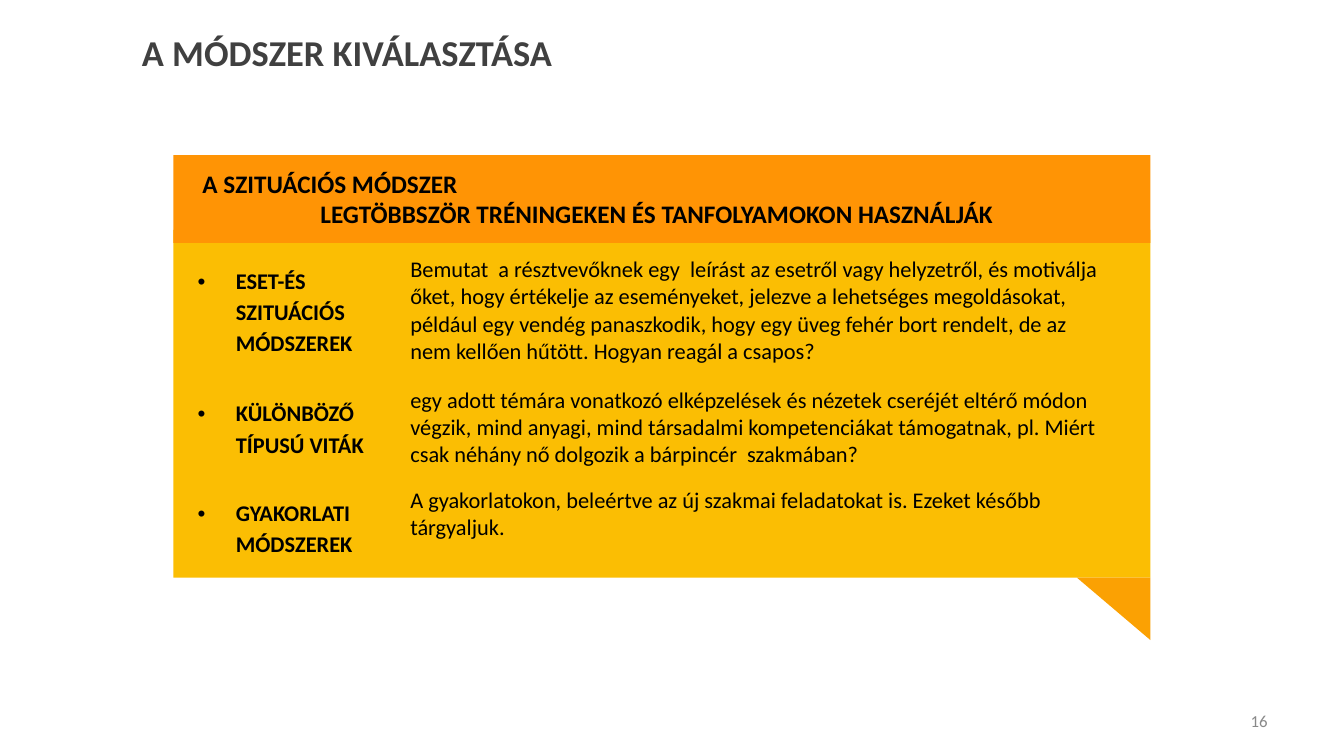
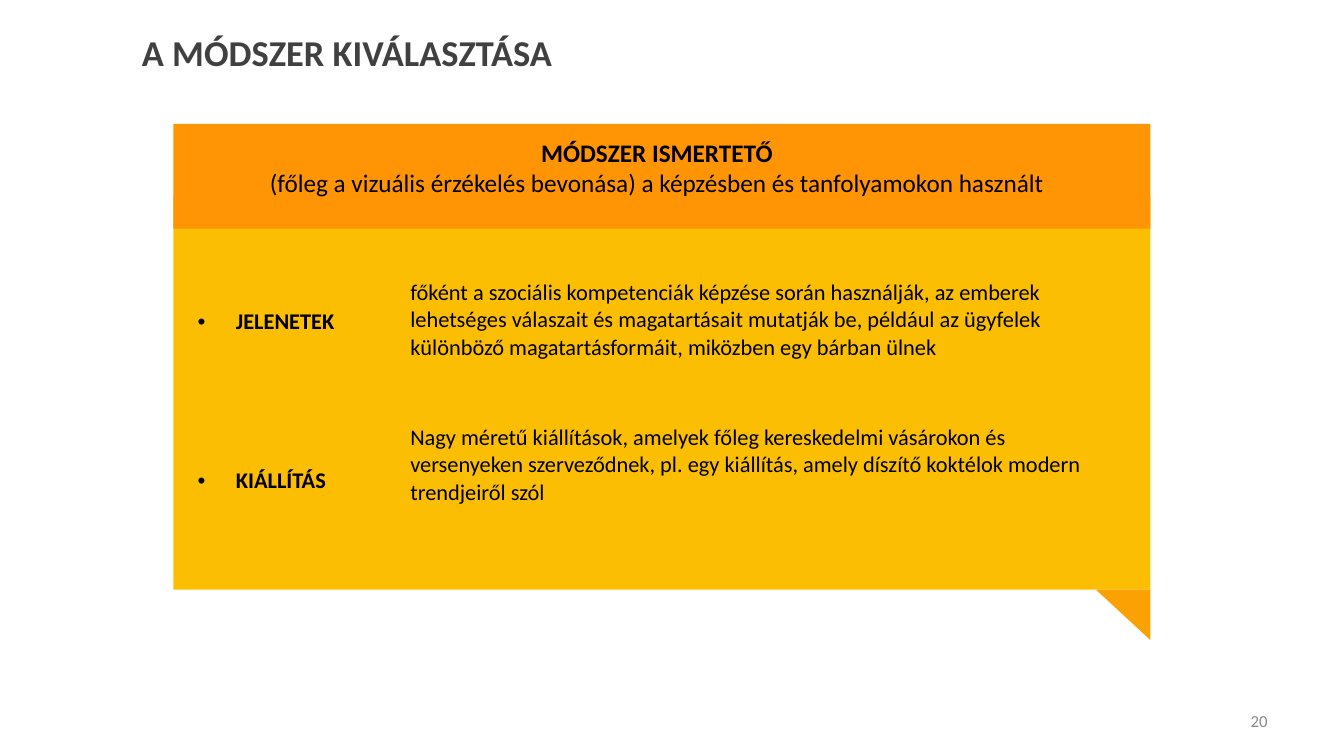
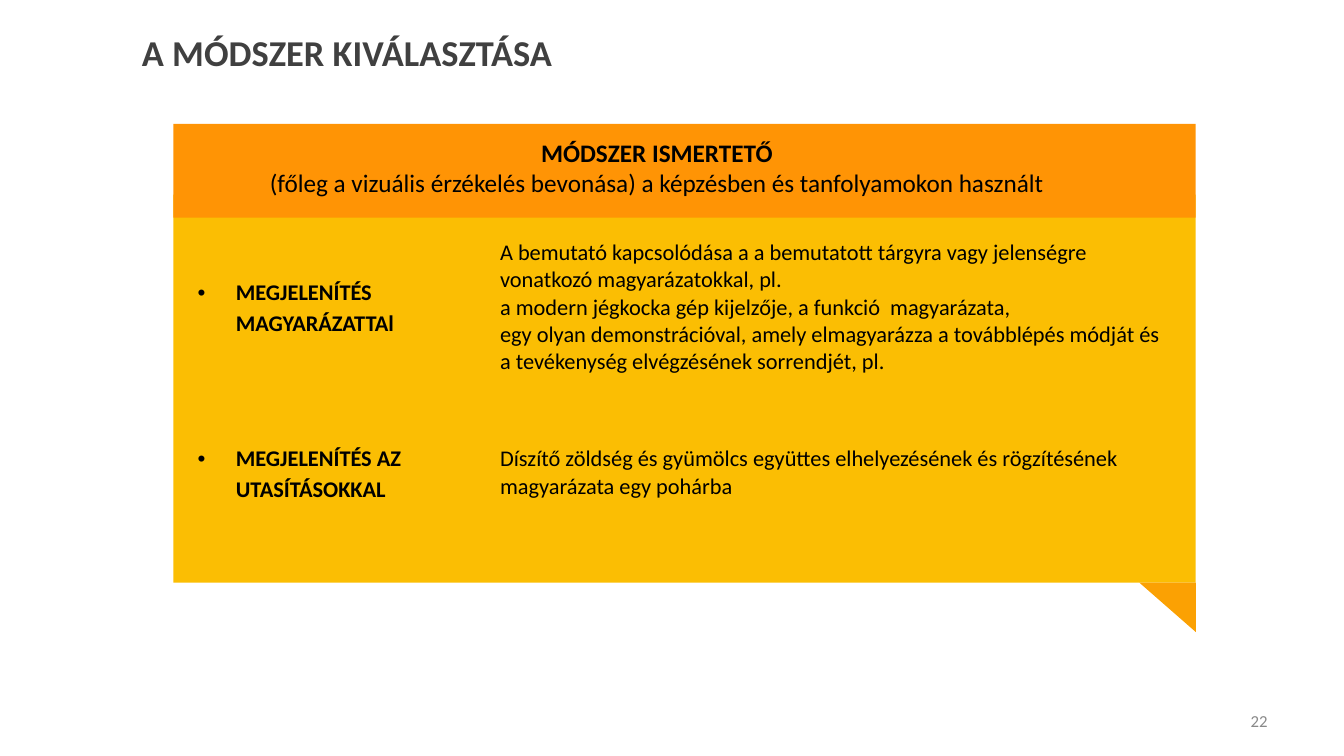
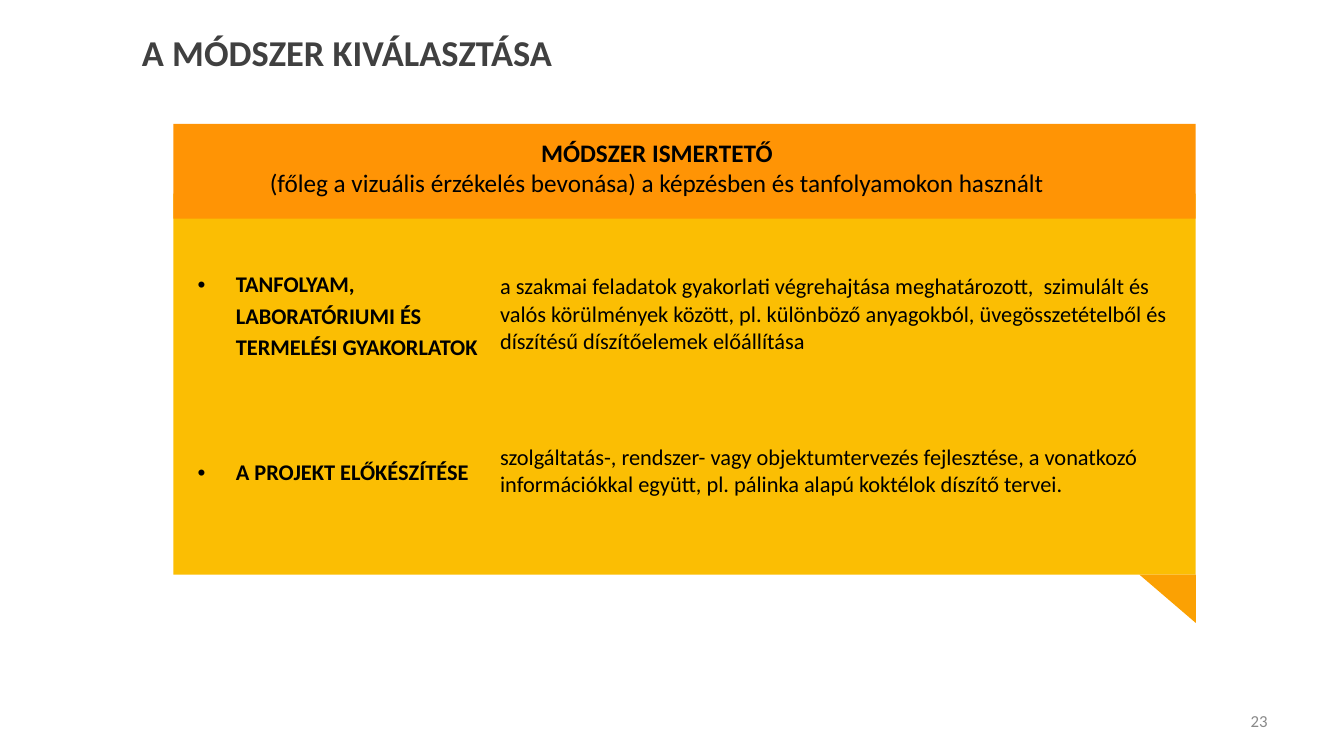
from pptx import Presentation
from pptx.dml.color import RGBColor
from pptx.enum.shapes import MSO_SHAPE as SHAPE
from pptx.enum.text import MSO_ANCHOR as ANCHOR, PP_ALIGN as ALIGN
from pptx.oxml.ns import qn
from pptx.util import Inches, Pt
from lxml.etree import SubElement

# Shared look
COLORS = {
    "title": "404040",
    "number": "898989",
    "text": "000000",
    "body": "FBBE03",
    "header": "FF9405",
    "tail": "FBA103",
}
FONT = "Calibri"
TITLE = "A MÓDSZER KIVÁLASZTÁSA"
NO_STYLE = "{2D5ABB26-0587-4C30-8999-92F81FD0307C}"
PANEL_LEFT, TABLE_LEFT = 1.72, 1.86
CELL_MARGIN, LINE_HEIGHT = 0.05, 0.27
LABEL_INDENT = 0.38

METHOD_HEADING = [
    ("MÓDSZER ISMERTETŐ", True, ALIGN.CENTER),
    ("(főleg a vizuális érzékelés bevonása) a képzésben és tanfolyamokon használt",
     False, ALIGN.CENTER),
]

# Row: height, label, description, spare lines below the description
SLIDES = [
    {
        "number": 16, "width": 9.69, "header": (1.54, 0.87), "body": (2.28, 3.45),
        "tail": (0.73, 0.62), "table_top": 2.46, "columns": (2.11, 7.15),
        "heading": [
            ("A SZITUÁCIÓS MÓDSZER", True, ALIGN.LEFT),
            ("LEGTÖBBSZÖR TRÉNINGEKEN ÉS TANFOLYAMOKON HASZNÁLJÁK", True, ALIGN.CENTER),
        ],
        "rows": [
            (1.25, "ESET-ÉS SZITUÁCIÓS MÓDSZEREK",
             "Bemutat  a résztvevőknek egy  leírást az esetről vagy helyzetről, és "
             "motiválja őket, hogy értékelje az eseményeket, jelezve a lehetséges "
             "megoldásokat, például egy vendég panaszkodik, hogy egy üveg fehér bort "
             "rendelt, de az nem kellően hűtött. Hogyan reagál a csapos?", 0),
            (1.07, "KÜLÖNBÖZŐ TÍPUSÚ VITÁK",
             "egy adott témára vonatkozó elképzelések és nézetek cseréjét eltérő módon "
             "végzik, mind anyagi, mind társadalmi kompetenciákat támogatnak, pl. Miért "
             "csak néhány nő dolgozik a bárpincér  szakmában?", 0),
            (0.74, "GYAKORLATI MÓDSZEREK",
             "A gyakorlatokon, beleértve az új szakmai feladatokat is. Ezeket később "
             "tárgyaljuk.", 1),
        ],
    },
    {
        "number": 20, "width": 9.69, "header": (1.23, 1.04), "body": (1.94, 3.91),
        "tail": (0.54, 0.5), "table_top": 2.49, "columns": (2.11, 7.15),
        "heading": METHOD_HEADING,
        "rows": [
            (1.37, "JELENETEK",
             "főként a szociális kompetenciák képzése során használják, az emberek "
             "lehetséges válaszait és magatartásait mutatják be, például az ügyfelek "
             "különböző magatartásformáit, miközben egy bárban ülnek", 0),
            (1.78, "KIÁLLÍTÁS",
             "Nagy méretű kiállítások, amelyek főleg kereskedelmi vásárokon és "
             "versenyeken szerveződnek, pl. egy kiállítás, amely díszítő koktélok "
             "modern trendjeiről szól", 1),
        ],
    },
    {
        "number": 22, "width": 10.14, "header": (1.23, 0.93), "body": (1.93, 3.85),
        "tail": (0.56, 0.49), "table_top": 2.32, "columns": (3, 6.84),
        "heading": METHOD_HEADING,
        "rows": [
            (1.44, "MEGJELENÍTÉS MAGYARÁZATTAl",
             "A bemutató kapcsolódása a a bemutatott tárgyra vagy jelenségre vonatkozó "
             "magyarázatokkal, pl.\n"
             "a modern jégkocka gép kijelzője, a funkció  magyarázata,\n"
             "egy olyan demonstrációval, amely elmagyarázza a továbblépés módját és a "
             "tevékenység elvégzésének sorrendjét, pl.", 0),
            (1.86, "MEGJELENÍTÉS AZ UTASÍTÁSOKKAL",
             "Díszítő zöldség és gyümölcs együttes elhelyezésének és rögzítésének "
             "magyarázata egy pohárba", 0),
        ],
    },
    {
        "number": 23, "width": 10.14, "header": (1.23, 0.94), "body": (1.92, 3.78),
        "tail": (0.56, 0.48), "table_top": 2.27, "columns": (3, 6.84),
        "heading": METHOD_HEADING,
        "rows": [
            (1.7, "TANFOLYAM, LABORATÓRIUMI ÉS TERMELÉSI GYAKORLATOK",
             "a szakmai feladatok gyakorlati végrehajtása meghatározott,  szimulált és "
             "valós körülmények között, pl. különböző anyagokból, üvegösszetételből és "
             "díszítésű díszítőelemek előállítása", 0),
            (1.41, "A PROJEKT ELŐKÉSZÍTÉSE",
             "szolgáltatás-, rendszer- vagy objektumtervezés fejlesztése, a vonatkozó "
             "információkkal együtt, pl. pálinka alapú koktélok díszítő tervei.", 0),
        ],
    },
]


def write(paragraph, text, size=16, color="text", bold=False, align=ALIGN.LEFT):
    """Put formatted text in a paragraph."""
    paragraph.alignment = align
    run = paragraph.add_run()
    run.text = text
    font = run.font
    font.name, font.size, font.bold = FONT, Pt(size), bold
    font.color.rgb = RGBColor.from_string(COLORS[color])


def next_paragraph(frame, index):
    return frame.add_paragraph() if index else frame.paragraphs[0]


def add_text(slide, box, lines, anchor=ANCHOR.MIDDLE, **style):
    """Add a text box; each line is (text, bold, alignment)."""
    frame = slide.shapes.add_textbox(*map(Inches, box)).text_frame
    frame.word_wrap = True
    frame.vertical_anchor = anchor
    for index, (text, bold, align) in enumerate(lines):
        write(next_paragraph(frame, index), text, bold=bold, align=align, **style)


def add_block(slide, kind, box, color):
    block = slide.shapes.add_shape(kind, *map(Inches, box))
    block.shadow.inherit = False
    block.fill.solid()
    block.fill.fore_color.rgb = RGBColor.from_string(COLORS[color])
    block.line.fill.background()
    return block


def add_panel(slide, content):
    """Speech panel: body, header band and a tail at the lower right."""
    width = content["width"]
    for part in ("body", "header"):
        top, height = content[part]
        add_block(slide, SHAPE.RECTANGLE, (PANEL_LEFT, top, width, height), part)
    tail_width, tail_height = content["tail"]
    tail_box = (PANEL_LEFT + width - tail_width, sum(content["body"]),
                tail_width, tail_height)
    add_block(slide, SHAPE.RIGHT_TRIANGLE, tail_box, "tail").rotation = 180
    add_text(slide, (1.91, content["header"][0] + 0.08, 9.21, 0.71),
             content["heading"], anchor=ANCHOR.TOP, size=18)


def write_label(cell, text):
    """Bold bulleted label with a hanging indent."""
    paragraph = cell.text_frame.paragraphs[0]
    paragraph.line_spacing = 1.14
    paragraph.space_after = Pt(6)
    properties = paragraph._p.get_or_add_pPr()
    properties.set("marL", str(Inches(LABEL_INDENT)))
    properties.set("indent", str(-Inches(LABEL_INDENT)))
    SubElement(properties, qn("a:buFont"), typeface="Arial")
    SubElement(properties, qn("a:buChar"), char="•")
    write(paragraph, text, bold=True)


def add_methods(slide, top, columns, rows):
    """Table of method labels and their descriptions."""
    frame = slide.shapes.add_table(
        len(rows), len(columns), Inches(TABLE_LEFT), Inches(top),
        Inches(sum(columns)), Inches(sum(row[0] for row in rows)))
    table = frame.table
    table.first_row = table.horz_banding = False
    for style in frame.element.iter(qn("a:tableStyleId")):
        style.text = NO_STYLE
    for column, width in zip(table.columns, columns):
        column.width = Inches(width)
    for row, (height, label, description, spare_lines) in zip(table.rows, rows):
        row.height = Inches(height)
        label_cell, description_cell = row.cells
        for cell in row.cells:
            cell.fill.background()
            cell.vertical_anchor = ANCHOR.MIDDLE
        write_label(label_cell, label)
        description_cell.margin_bottom = Inches(CELL_MARGIN + spare_lines * LINE_HEIGHT)
        for index, line in enumerate(description.split("\n")):
            write(next_paragraph(description_cell.text_frame, index), line)


def add_slide(deck, content):
    slide = deck.slides.add_slide(deck.slide_layouts[6])
    add_panel(slide, content)
    add_methods(slide, content["table_top"], content["columns"], content["rows"])
    # Title and page number
    add_text(slide, (1.31, 0.21, 9.29, 0.62), [(TITLE, True, ALIGN.LEFT)],
             size=26, color="title")
    add_text(slide, (9.56, 6.95, 3.11, 0.4),
             [(str(content["number"]), False, ALIGN.RIGHT)], size=12, color="number")


def main():
    deck = Presentation()
    deck.slide_width, deck.slide_height = Inches(13.33), Inches(7.5)
    for content in SLIDES:
        add_slide(deck, content)
    deck.save("out.pptx")


if __name__ == "__main__":
    main()
